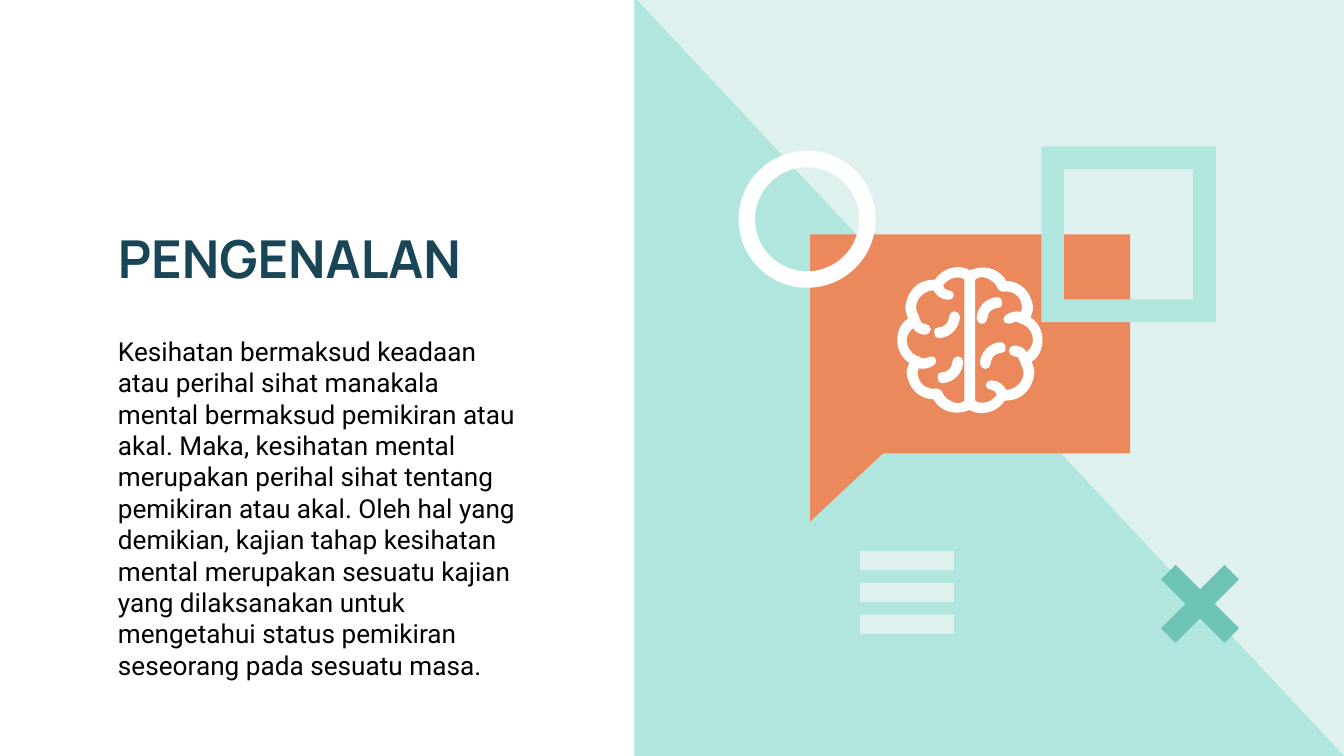
from dataclasses import dataclass

from lxml import etree
from pptx import Presentation
from pptx import util as u
from pptx.dml.color import RGBColor
from pptx.enum import shapes, text
from pptx.oxml import ns

Point = tuple[float, float]
Contour = list[Point]
SHAPE = shapes.MSO_SHAPE


@dataclass(frozen=True)
class Theme:
    mist: str = "DFF1EF"
    mint: str = "B1E6DE"
    teal: str = "6CC3B6"
    orange: str = "EB895D"
    white: str = "FFFFFF"
    navy: str = "194656"
    black: str = "000000"
    title_font: str = "Manrope"
    body_font: str = "Roboto"
    title_size: int = 28
    body_size: int = 14


@dataclass(frozen=True)
class Box:
    left: float
    top: float
    width: float
    height: float

    def lengths(self) -> list[u.Length]:
        return [u.Cm(v) for v in (self.left, self.top, self.width, self.height)]


@dataclass(frozen=True)
class Figure:
    kind: SHAPE
    box: Box
    color: str
    rotation: float = 0
    ring: float | None = None


@dataclass(frozen=True)
class Label:
    words: str
    box: Box
    font: str
    size: int
    color: str
    bold: bool = False
    space_after: float = 0


THEME = Theme()
SLIDE = Box(0, 0, 25.4, 14.29)
PANEL_LEFT = 11.99
BRAIN_CENTER = (18.33, 6.43)
BRAIN_UNIT = 0.0254

LOBES = [
    (0, -52), (-5, -55), (-10, -55), (-16, -53), (-21, -51), (-24, -48), (-26, -45),
    (-34, -45), (-40, -42), (-44, -36), (-46, -33), (-48, -28), (-48, -24),
    (-48, -22), (-47, -19), (-46, -16), (-51, -13), (-54, -7), (-54, 0),
    (-54, 7), (-51, 13), (-45, 17), (-46, 19), (-47, 22), (-47, 24),
    (-47, 27), (-46, 29), (-45, 32), (-42, 39), (-35, 44), (-27, 44),
    (-24, 50), (-17, 54), (-10, 54), (-6, 54), (-3, 53), (0, 52),
]
HOLLOW = [
    (-47, 0), (-47, -3), (-45, -7), (-42, -9), (-41, -6), (-37, -4), (-33, -4),
    (-31, -4), (-29, -6), (-29, -8), (-29, -10), (-31, -12), (-33, -12),
    (-35, -12), (-37, -13), (-37, -15), (-37, -16), (-37, -17), (-38, -18),
    (-39, -20), (-40, -22), (-40, -24), (-40, -27), (-39, -29), (-38, -31),
    (-35, -35), (-31, -37), (-27, -37), (-25, -33), (-21, -30), (-16, -30),
    (-14, -30), (-12, -31), (-12, -33), (-12, -36), (-14, -37), (-16, -37),
    (-18, -37), (-20, -39), (-20, -41), (-18, -43), (-16, -45), (-13, -46),
    (-10, -47), (-6, -47), (-4, -45), (-4, -15), (-4, 15), (-4, 45),
    (-5, 46), (-7, 47), (-9, 47), (-15, 46), (-19, 43), (-21, 38),
    (-22, 37), (-23, 36), (-25, 36), (-31, 37), (-36, 34), (-38, 29),
    (-39, 27), (-39, 26), (-39, 24), (-39, 23), (-39, 22), (-38, 21),
    (-34, 22), (-30, 21), (-26, 18), (-26, 17), (-25, 16), (-25, 16),
    (-25, 15), (-26, 14), (-26, 13), (-28, 12), (-30, 12), (-32, 13),
    (-33, 14), (-35, 14), (-37, 13), (-37, 12), (-38, 12), (-39, 12),
    (-44, 10), (-47, 5), (-47, 0),
]
FOLD = [
    (-24, 28), (-24, 30), (-23, 32), (-21, 32), (-12, 32), (-5, 24), (-5, 16),
    (-5, 14), (-7, 12), (-9, 12), (-11, 12), (-13, 14), (-13, 16),
    (-13, 20), (-16, 24), (-21, 24), (-23, 24), (-24, 25), (-24, 28),
]


def paint(sp, color: str) -> None:
    sp.shadow.inherit = False
    sp.fill.solid()
    sp.fill.fore_color.rgb = RGBColor.from_string(color)
    sp.line.fill.background()


def draw_figure(s, fig: Figure) -> None:
    sp = s.shapes.add_shape(fig.kind, *fig.box.lengths())
    sp.rotation = fig.rotation
    if fig.ring is not None:
        sp.adjustments[0] = fig.ring
    paint(sp, fig.color)


def bend(sp) -> None:
    lines = list(sp._element.iter(ns.qn("a:lnTo")))
    for i in range(0, len(lines), 3):
        cubic = etree.Element(ns.qn("a:cubicBezTo"))
        lines[i].addprevious(cubic)
        for line in lines[i:i + 3]:
            cubic.append(line[0])
            line.getparent().remove(line)


def draw_outline(s, contours: list[Contour], color: str, curved: bool = False) -> None:
    first, *others = [[(u.Cm(x), u.Cm(y)) for x, y in c] for c in contours]
    builder = s.shapes.build_freeform(*first[0])
    builder.add_line_segments(first[1:], close=not curved)
    for contour in others:
        builder.move_to(*contour[0])
        builder.add_line_segments(contour[1:], close=not curved)
    sp = builder.convert_to_shape()
    if curved:
        bend(sp)
    paint(sp, color)


def draw_label(s, label: Label) -> None:
    tf = s.shapes.add_textbox(*label.box.lengths()).text_frame
    tf.word_wrap = True
    tf.vertical_anchor = text.MSO_ANCHOR.TOP
    tf.margin_left = tf.margin_right = tf.margin_top = tf.margin_bottom = u.Cm(0.25)
    tf.text = label.words
    p = tf.paragraphs[0]
    p.space_after = u.Pt(label.space_after)
    font = p.runs[0].font
    font.name, font.size, font.bold = label.font, u.Pt(label.size), label.bold
    font.color.rgb = RGBColor.from_string(label.color)


def half_turn(points: Contour) -> Contour:
    return [(-x, -y) for x, y in points]


def on_slide(points: Contour) -> Contour:
    cx, cy = BRAIN_CENTER
    return [(cx + x * BRAIN_UNIT, cy + y * BRAIN_UNIT) for x, y in points]


def draw_brain(s) -> None:
    high_fold = [(x - 2.5, y - 33.5) for x, y in FOLD]
    shell = [LOBES + half_turn(LOBES)[1:], HOLLOW, half_turn(HOLLOW)]
    folds = [FOLD, high_fold, half_turn(FOLD), half_turn(high_fold)]
    for contours in (shell, *([fold] for fold in folds)):
        draw_outline(s, [on_slide(c) for c in contours], THEME.white, curved=True)


def main() -> None:
    prs = Presentation()
    prs.slide_width, prs.slide_height = u.Cm(SLIDE.width), u.Cm(SLIDE.height)
    s = prs.slides.add_slide(prs.slide_layouts[6])

    panel = Box(PANEL_LEFT, 0, SLIDE.width - PANEL_LEFT, SLIDE.height)
    draw_figure(s, Figure(SHAPE.RECTANGLE, panel, THEME.mist))
    draw_outline(s, [[(PANEL_LEFT, 0), (12.04, 0), (SLIDE.width, SLIDE.height),
                      (PANEL_LEFT, SLIDE.height)]], THEME.mint)

    draw_label(s, Label("PENGENALAN", Box(1.98, 4.02, 8.74, 2.06), THEME.title_font,
                        THEME.title_size, THEME.navy, bold=True))
    draw_label(s, Label(
        "Kesihatan bermaksud keadaan atau perihal sihat manakala mental bermaksud "
        "pemikiran atau akal. Maka, kesihatan mental merupakan perihal sihat tentang "
        "pemikiran atau akal. Oleh hal yang demikian, kajian tahap kesihatan mental "
        "merupakan sesuatu kajian yang dilaksanakan untuk mengetahui status pemikiran "
        "seseorang pada sesuatu masa.",
        Box(1.98, 6.09, 8.13, 7.24), THEME.body_font, THEME.body_size, THEME.black,
        space_after=8))

    draw_figure(s, Figure(SHAPE.RECTANGLE, Box(15.31, 4.43, 6.05, 4.14), THEME.orange))
    draw_outline(s, [[(17.02, 8.26), (15.31, 9.86), (15.31, 8.26)]], THEME.orange)
    draw_brain(s)

    draw_figure(s, Figure(SHAPE.FRAME, Box(19.68, 2.77, 3.3, 3.32), THEME.mint, ring=0.13))
    for angle in (-45, 45):
        draw_figure(s, Figure(SHAPE.RECTANGLE, Box(21.83, 11.22, 1.7, 0.39),
                              THEME.teal, rotation=angle))
    draw_figure(s, Figure(SHAPE.DONUT, Box(13.96, 2.85, 2.59, 2.59), THEME.white, ring=0.12))
    for i in range(3):
        draw_figure(s, Figure(SHAPE.RECTANGLE, Box(16.25, 10.42 + 0.6 * i, 1.78, 0.36),
                              THEME.mist))

    prs.save("out.pptx")


if __name__ == "__main__":
    main()
